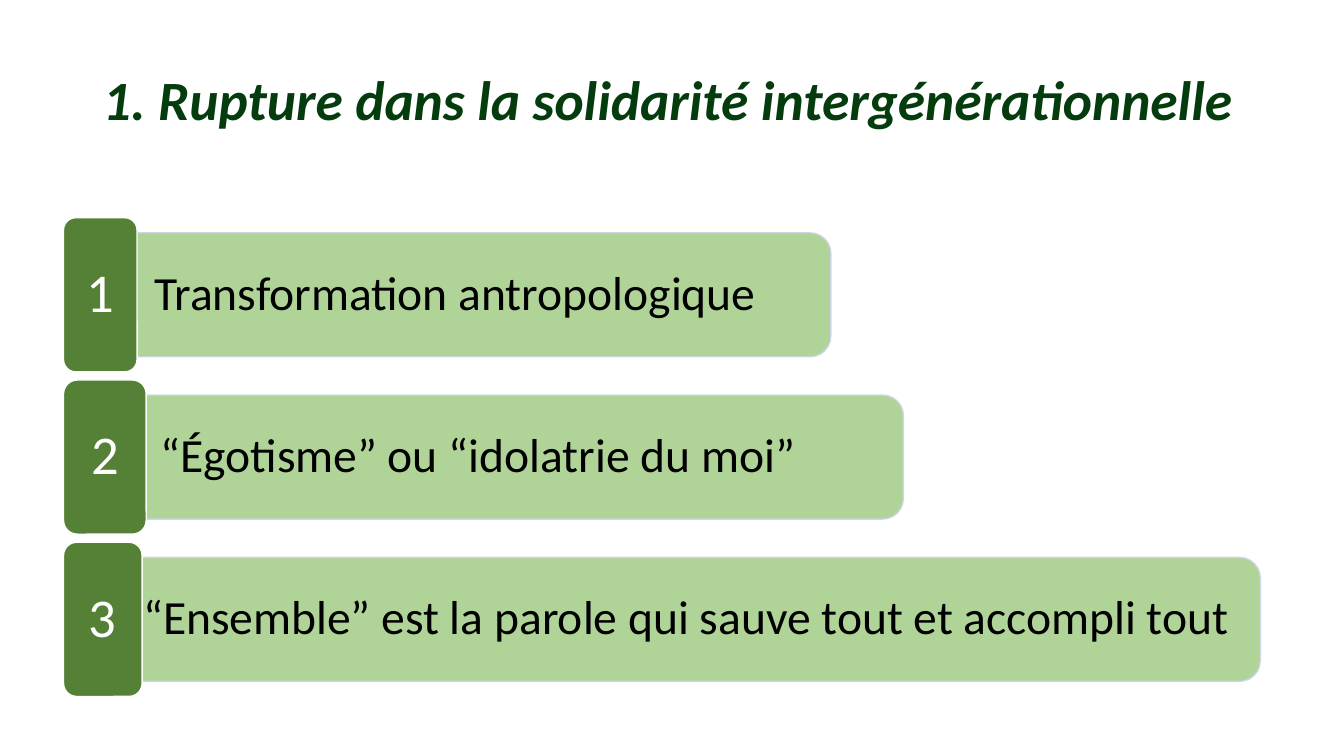
from lxml import etree
from pptx import Presentation
from pptx import util as u
from pptx.dml.color import RGBColor
from pptx.enum import shapes, text
from pptx.oxml.ns import qn

LEFT, TOP, ROW_HEIGHT, ROW_PITCH = 0.63, 2.16, 1.53, 1.61
BAR_HEIGHT, LABEL_HEIGHT = 1.23, 1.11

# label, badge width, (bar left, bar width), (label left, label width)
ROWS = [
    ("Transformation antropologique", 0.73, (1.35, 6.89), (1.39, 6.65)),
    ("“Égotisme” ou “idolatrie du moi”", 0.82, (1.45, 7.51), (1.45, 7.45)),
    ("“Ensemble” est la parole qui sauve tout et accompli tout", 0.78,
     (1.3, 11.2), (1.28, 11.19)),
]


def color(value):
    return RGBColor.from_string(value)


def place(shape, left, top, width, height):
    box = {"left": left, "top": top, "width": width, "height": height}
    for name, value in box.items():
        setattr(shape, name, u.Inches(value))


def write(shape, content, size, hex_color, insets, align, **font_format):
    """Fill a shape with one formatted line; insets are left, top, right, bottom."""
    frame = shape.text_frame
    frame.auto_size = text.MSO_AUTO_SIZE.NONE
    frame.word_wrap = True
    frame.vertical_anchor = text.MSO_ANCHOR.MIDDLE
    for side, inset in zip(("left", "top", "right", "bottom"), insets):
        setattr(frame, f"margin_{side}", u.Inches(inset))
    paragraph = frame.paragraphs[0]
    paragraph.alignment = align
    paragraph.line_spacing = 0.9
    run = paragraph.add_run()
    run.text = content
    run.font.color.rgb = color(hex_color)
    for name, value in {"name": "Calibri", "size": u.Pt(size), **font_format}.items():
        setattr(run.font, name, value)


def add_shape(slide, kind, box, fill, line, opacity=100):
    shape = slide.shapes.add_shape(kind, *map(u.Inches, box))
    shape.shadow.inherit = False
    shape.fill.solid()
    shape.fill.fore_color.rgb = color(fill)
    shape.line.color.rgb = color(line)
    shape.line.width = u.Pt(1)
    if opacity < 100:
        for element in shape.element.spPr.iter(qn("a:srgbClr")):
            etree.SubElement(element, qn("a:alpha"), val=str(opacity * 1000))
    return shape


def add_title(slide, box):
    title = slide.shapes.title
    place(title, *box)
    write(title, "1. Rupture dans la solidarité intergénérationnelle", 39.6, "053C0E",
          (0.1, 0.05, 0.1, 0.64), text.PP_ALIGN.LEFT, bold=True, italic=True)


def add_row(slide, number, top, row):
    """Draw a bar rounded on its right, its label and its numbered badge."""
    content, badge_width, (bar_left, bar_width), (label_left, label_width) = row
    middle = top + ROW_HEIGHT / 2

    # The bar is a quarter turn of an upright shape about the same centre.
    upright = (bar_left + (bar_width - BAR_HEIGHT) / 2, middle - bar_width / 2,
               BAR_HEIGHT, bar_width)
    bar = add_shape(slide, shapes.MSO_SHAPE.ROUND_2_SAME_RECTANGLE, upright,
                    "A8D08C", "CCD3EA", opacity=90)
    bar.rotation = 90

    label_box = (label_left, middle - LABEL_HEIGHT / 2, label_width, LABEL_HEIGHT)
    label = slide.shapes.add_textbox(*map(u.Inches, label_box))
    write(label, content, 34, "000000", (0.14, 0.07, 0.14, 0.07), text.PP_ALIGN.LEFT)

    badge = add_shape(slide, shapes.MSO_SHAPE.ROUNDED_RECTANGLE,
                      (LEFT, top, badge_width, ROW_HEIGHT), "548135", "FFFFFF")
    write(badge, str(number), 39, "FFFFFF", (0.16, 0.08, 0.16, 0.08),
          text.PP_ALIGN.CENTER)


def main():
    presentation = Presentation()
    presentation.slide_width = u.Inches(13.33)
    presentation.slide_height = u.Inches(7.5)
    slide = presentation.slides.add_slide(presentation.slide_layouts[5])
    add_title(slide, (0.92, 0.59, 11.97, 1.45))
    for index, row in enumerate(ROWS):
        add_row(slide, index + 1, TOP + index * ROW_PITCH, row)
    presentation.save("out.pptx")


if __name__ == "__main__":
    main()
